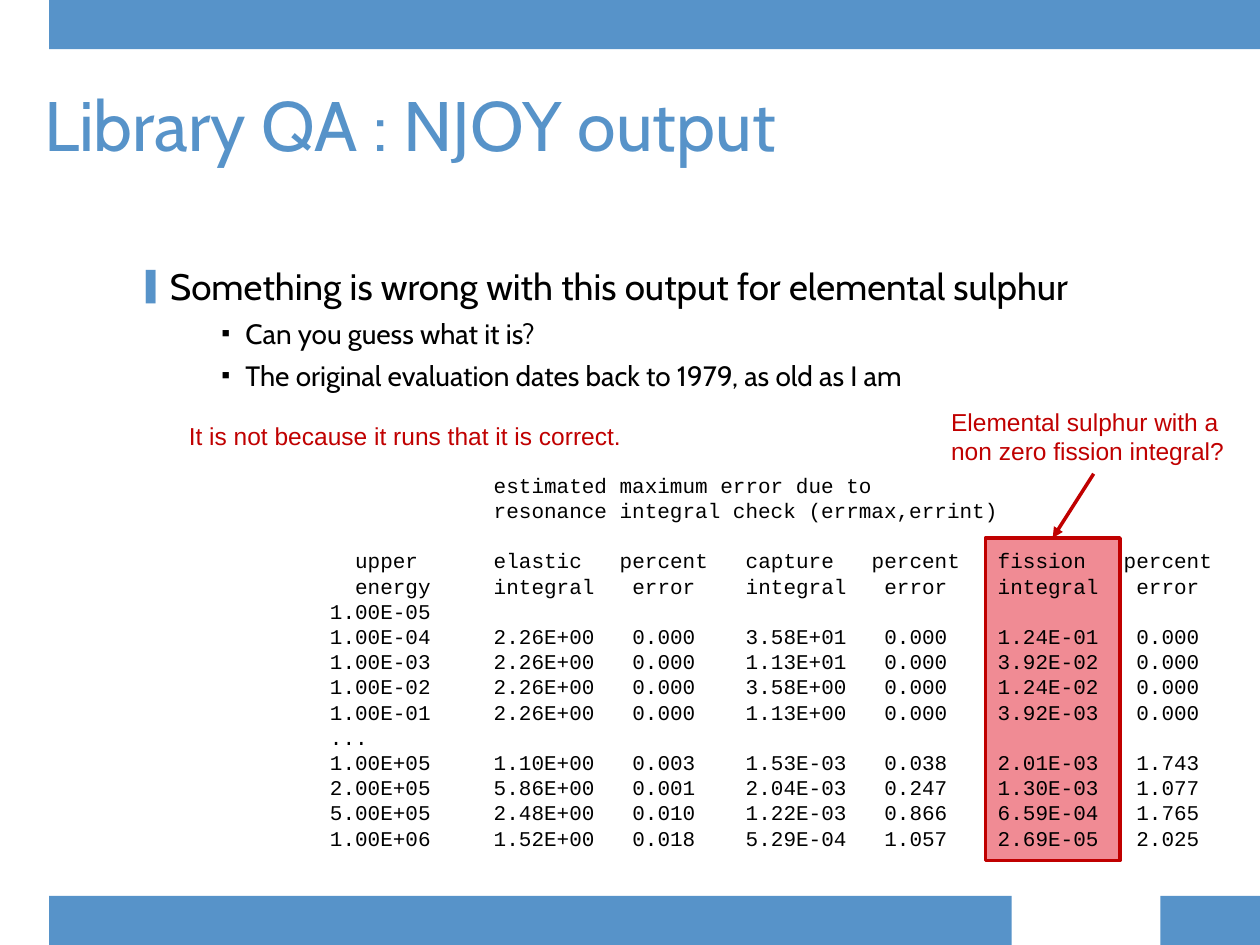
"""Builds the slide on checking NJOY output for elemental sulphur."""
import pptx
import pptx.dml.color
import pptx.enum.shapes
import pptx.enum.text
import pptx.oxml.ns
import pptx.util
from lxml import etree

Inches = pptx.util.Inches
Pt = pptx.util.Pt
RGBColor = pptx.dml.color.RGBColor
qn = pptx.oxml.ns.qn

BLUE = RGBColor(0x57, 0x93, 0xC9)
PINK = RGBColor(0xF0, 0x8B, 0x94)
RED = RGBColor(0xC0, 0x00, 0x00)
BLACK = RGBColor(0x00, 0x00, 0x00)

deck = pptx.Presentation()
deck.slide_width, deck.slide_height = Inches(10), Inches(7.5)
slide = deck.slides.add_slide(deck.slide_layouts[6])


def add_rect(left, top, width, height, fill):
    rect = slide.shapes.add_shape(
        pptx.enum.shapes.MSO_SHAPE.RECTANGLE,
        Inches(left), Inches(top), Inches(width), Inches(height))
    rect.shadow.inherit = False
    rect.fill.solid()
    rect.fill.fore_color.rgb = fill
    rect.line.fill.background()
    return rect


def add_text(left, top, width, height, text, font, size, color):
    box = slide.shapes.add_textbox(
        Inches(left), Inches(top), Inches(width), Inches(height))
    frame = box.text_frame
    frame.word_wrap = True
    frame.vertical_anchor = pptx.enum.text.MSO_ANCHOR.TOP
    frame.text = text
    for para in frame.paragraphs:
        for run in para.runs:
            run.font.name = font
            run.font.size = Pt(size)
            run.font.color.rgb = color
    return frame


for left, top, width in [(9.21, 7.11, 0.79), (0.39, 7.11, 7.64), (0.39, 0, 9.61)]:
    add_rect(left, top, width, 0.39, BLUE)

mark = add_rect(7.82, 4.27, 1.07, 2.56, PINK)
mark.line.color.rgb = RED
mark.line.width = Pt(2)

title = add_text(0.27, 0.6, 9.73, 0.95, "Library QA : NJOY output", "Cabin", 40, BLUE)
title.margin_left = Inches(0.08)

points = [
    ("Something is wrong with this output for elemental sulphur", 0, 21, 0.19, "▌", BLUE, 75),
    ("Can you guess what it is?", 1, 16, 0.79, "▪", BLACK, 90),
    ("The original evaluation dates back to 1979, as old as I am", 1, 16, 0.79, "▪", BLACK, 90),
]
body = add_text(1.06, 2.06, 8.44, 1.2, "\n".join(point[0] for point in points),
                "Cabin", 21, BLACK)
for para, (_, level, size, indent, sign, color, scale) in zip(body.paragraphs, points):
    para.level = level
    para.line_spacing = Pt(24)
    para.runs[0].font.size = Pt(size)
    props = para._p.get_or_add_pPr()
    props.set("marL", str(Inches(indent)))
    props.set("indent", str(Inches(-0.19)))
    tint = etree.SubElement(props, qn("a:buClr"))
    etree.SubElement(tint, qn("a:srgbClr"), val=str(color))
    etree.SubElement(props, qn("a:buSzPct"), val=str(scale * 1000))
    etree.SubElement(props, qn("a:buFont"), typeface="Arial")
    etree.SubElement(props, qn("a:buChar"), char=sign)

intro = ["estimated maximum error due to", "resonance integral check (errmax,errint)"]
heads = [
    "upper elastic percent capture percent fission percent",
    "energy integral error integral error integral error",
]
rows = [
    "1.00E-05",
    "1.00E-04 2.26E+00 0.000 3.58E+01 0.000 1.24E-01 0.000",
    "1.00E-03 2.26E+00 0.000 1.13E+01 0.000 3.92E-02 0.000",
    "1.00E-02 2.26E+00 0.000 3.58E+00 0.000 1.24E-02 0.000",
    "1.00E-01 2.26E+00 0.000 1.13E+00 0.000 3.92E-03 0.000",
    "...",
    "1.00E+05 1.10E+00 0.003 1.53E-03 0.038 2.01E-03 1.743",
    "2.00E+05 5.86E+00 0.001 2.04E-03 0.247 1.30E-03 1.077",
    "5.00E+05 2.48E+00 0.010 1.22E-03 0.866 6.59E-04 1.765",
    "1.00E+06 1.52E+00 0.018 5.29E-04 1.057 2.69E-05 2.025",
]
lines = intro + ["\t".join(row.split()) for row in heads + rows]
starts = [1.7] * len(intro) + [0.6] * len(heads) + [0.4] * len(rows)
stops = [(pos, kind) for left in (1.7, 3.7, 5.7)
         for pos, kind in ((left, "l"), (left + 1.35, "ctr"))]

report = add_text(2.12, 3.7, 7.88, 3.13, "\n".join("\t" + line for line in lines),
                  "Courier New", 12, BLACK)
report.paragraphs[len(intro)].space_before = Pt(14.4)
for para, start in zip(report.paragraphs, starts):
    tabs = etree.SubElement(para._p.get_or_add_pPr(), qn("a:tabLst"))
    for pos, kind in [(start, "l")] + [stop for stop in stops if stop[0] > start]:
        etree.SubElement(tabs, qn("a:tab"), pos=str(Inches(pos)), algn=kind)

add_text(7.45, 3.18, 2.45, 0.57, "Elemental sulphur with a non zero fission integral?",
         "Arial", 14, RED)

arrow = slide.shapes.add_connector(
    pptx.enum.shapes.MSO_CONNECTOR.STRAIGHT,
    Inches(8.68), Inches(3.76), Inches(8.34), Inches(4.27))
arrow.end_connect(mark, 0)
arrow.line.color.rgb = RED
arrow.line.width = Pt(2)
etree.SubElement(arrow.line._get_or_add_ln(), qn("a:tailEnd"), type="triangle")
etree.SubElement(arrow._element.spPr, qn("a:effectLst"))

add_text(1.4, 3.29, 3.74, 0.34, "It is not because it runs that it is correct.",
         "Arial", 14, RED)

deck.save("out.pptx")
